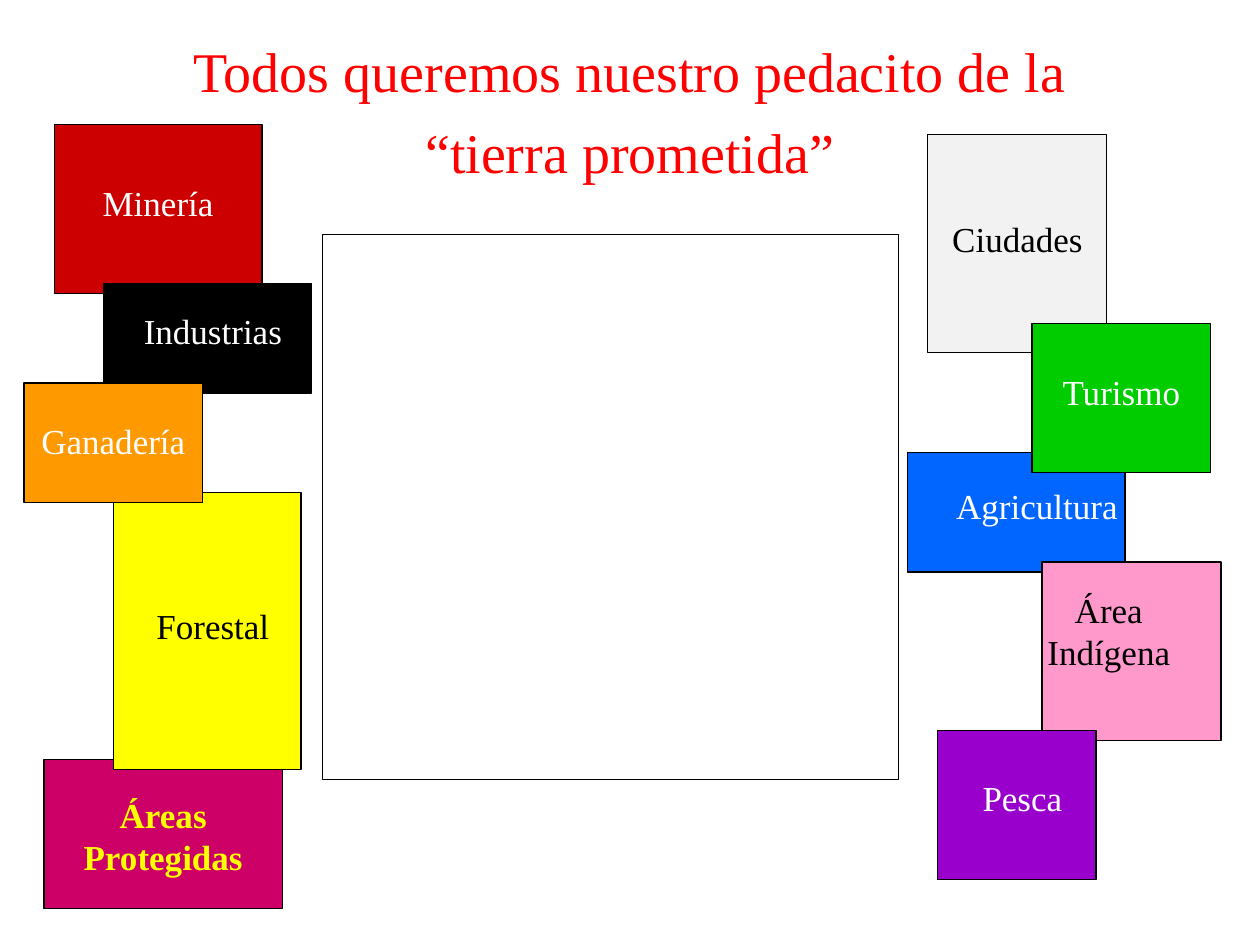
from pptx import Presentation
from pptx.dml.color import RGBColor
from pptx.enum.shapes import MSO_SHAPE
from pptx.enum.text import MSO_AUTO_SIZE, PP_ALIGN
from pptx.util import Inches, Pt

RECT = MSO_SHAPE.RECTANGLE
CENTER = PP_ALIGN.CENTER
GROW = MSO_AUTO_SIZE.SHAPE_TO_FIT_TEXT

FONT = "Times New Roman"
WHITE = RGBColor(0xFF, 0xFF, 0xFF)
BLACK = RGBColor(0x00, 0x00, 0x00)
RED = RGBColor(0xFF, 0x00, 0x00)
CRIMSON = RGBColor(0xCC, 0x00, 0x00)
BLUE = RGBColor(0x00, 0x66, 0xFF)
MAGENTA = RGBColor(0xCC, 0x00, 0x66)
PINK = RGBColor(0xFF, 0x99, 0xCC)
GRAY = RGBColor(0xF2, 0xF2, 0xF2)
GREEN = RGBColor(0x00, 0xCC, 0x00)
YELLOW = RGBColor(0xFF, 0xFF, 0x00)
ORANGE = RGBColor(0xFF, 0x99, 0x00)
PURPLE = RGBColor(0x99, 0x00, 0xCC)

TITLE = ["Todos queremos nuestro pedacito de la", "“tierra prometida”"]
TITLE_BOX = (0, 0.24, 10, 1.26)
LAND_BOX = (2.56, 1.86, 4.57, 4.33)

# lines, fill, text colour, block (left, top, width, height), label (left, top, width, height)
BACK_SECTORS = [
    (["Minería"], CRIMSON, WHITE, (0.43, 0.99, 1.65, 1.34), (0.27, 1.39, 1.97, 0.44)),
    (["Agricultura"], BLUE, WHITE, (7.2, 3.59, 1.73, 0.95), (7.13, 3.8, 2.2, 0.44)),
    (["Áreas Protegidas"], MAGENTA, YELLOW, (0.35, 6.03, 1.89, 1.18), (0.27, 6.25, 2.05, 0.77)),
]
FRONT_SECTORS = [
    (["Área", "Indígena"], PINK, BLACK, (8.27, 4.46, 1.42, 1.42), (7.95, 4.62, 2.05, 0.77)),
    (["Ciudades"], GRAY, BLACK, (7.36, 1.07, 1.42, 1.73), (7.05, 1.68, 2.05, 0.44)),
    (["Industrias"], BLACK, WHITE, (0.82, 2.25, 1.65, 0.87), (0.59, 2.41, 2.2, 0.44)),
    (["Turismo"], GREEN, WHITE, (8.19, 2.57, 1.42, 1.18), (7.8, 2.89, 2.2, 0.5)),
    (["Forestal"], YELLOW, BLACK, (0.9, 3.91, 1.49, 2.2), (0.59, 4.75, 2.2, 0.44)),
    (["Ganadería"], ORANGE, WHITE, (0.19, 3.04, 1.42, 0.95), (-0.2, 3.28, 2.2, 0.44)),
    (["Pesca"], PURPLE, WHITE, (7.44, 5.8, 1.26, 1.18), (7.13, 6.11, 1.97, 0.44)),
]
BOLD_FILL = MAGENTA
FIRST_LINE_INDENT = Inches(0.35)


def add_block(shapes, box, fill):
    sp = shapes.add_shape(RECT, *map(Inches, box))
    sp.shadow.inherit = False
    sp.fill.solid()
    sp.fill.fore_color.rgb = fill
    sp.line.color.rgb = BLACK
    sp.line.width = Pt(0.75)


def add_text(shapes, box, lines, size, color, bold=False, gap=0):
    tf = shapes.add_textbox(*map(Inches, box)).text_frame
    tf.word_wrap = True
    tf.auto_size = GROW
    tf.text = "\n".join(lines)
    for p in tf.paragraphs:
        p.alignment = CENTER
        p.space_before = Pt(gap)
        font = p.runs[0].font
        font.name, font.size, font.bold = FONT, Pt(size), bold
        font.color.rgb = color
    return tf


def add_sectors(shapes, sectors):
    for lines, fill, color, block, label in sectors:
        group = shapes.add_group_shape().shapes
        add_block(group, block, fill)
        tf = add_text(group, label, lines, 20, color, bold=fill == BOLD_FILL)
        if len(lines) > 1:
            # the first line sits left of the centre
            tf.paragraphs[0]._p.get_or_add_pPr().set("marR", str(FIRST_LINE_INDENT))


prs = Presentation()
prs.slide_width, prs.slide_height = Inches(10), Inches(7.5)
s = prs.slides.add_slide(prs.slide_layouts[6])

add_block(s.shapes, LAND_BOX, WHITE)
add_sectors(s.shapes, BACK_SECTORS)
add_text(s.shapes, TITLE_BOX, TITLE, 32, RED, gap=8)
add_sectors(s.shapes, FRONT_SECTORS)

prs.save("out.pptx")
